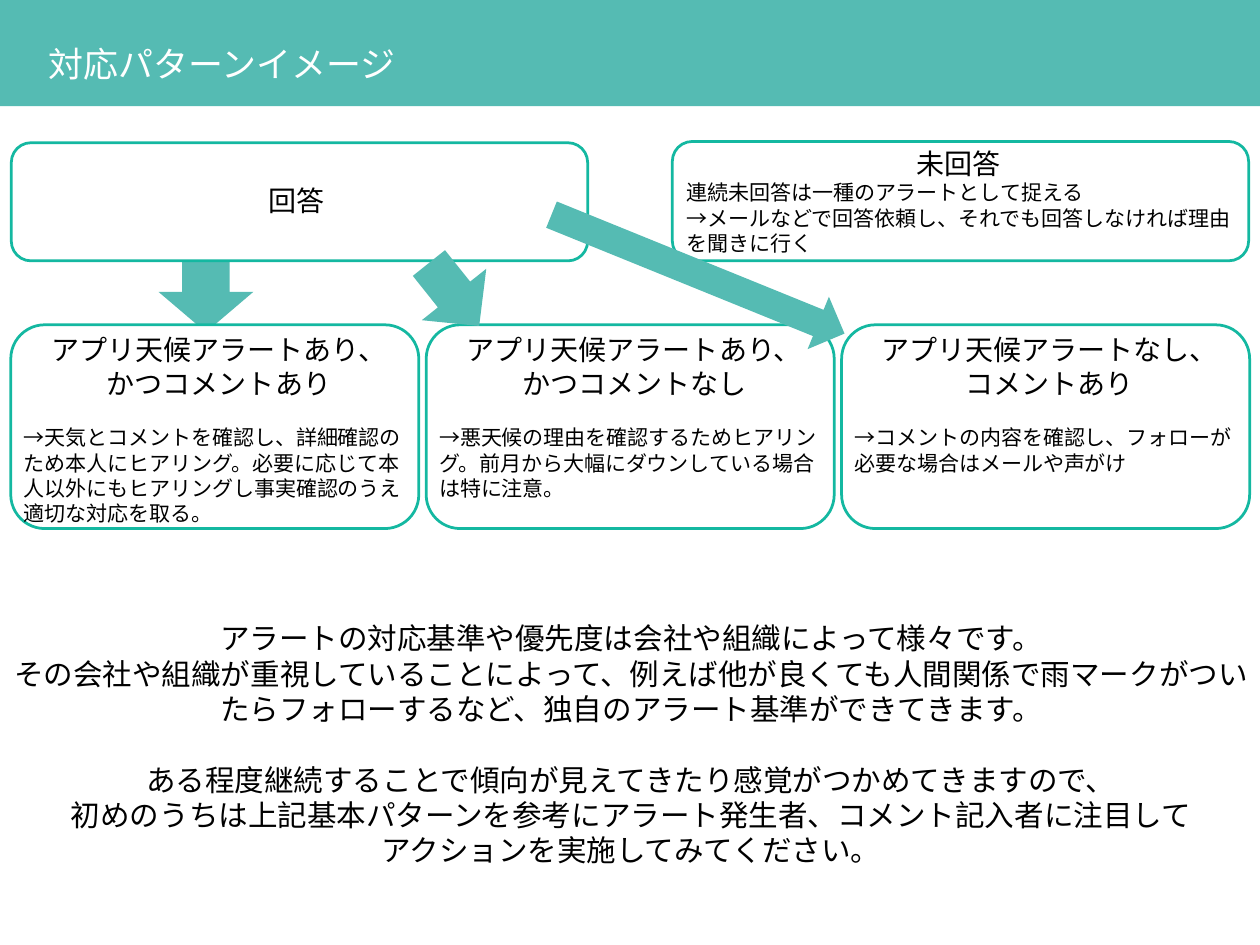
from lxml.etree import SubElement
from pptx import Presentation
from pptx.dml.color import RGBColor
from pptx.enum.shapes import MSO_SHAPE as Shape
from pptx.enum.text import MSO_ANCHOR as Anchor, MSO_AUTO_SIZE as AutoSize, PP_ALIGN as Align
from pptx.oxml.ns import qn
from pptx.util import Pt

FONT = "Noto Sans CJK JP"
TEAL, BORDER, WHITE, BLACK = "55BBB3", "14B8A1", "FFFFFF", "000000"
HEADING, BODY, CLOSING = 22.8, 17.1, 24
LINE_PITCH = 1.19

TITLE = "対応パターンイメージ"
ANSWERED = ["回答"]
UNANSWERED = ["未回答"]
UNANSWERED_NOTES = [
    "連続未回答は一種のアラートとして捉える",
    "→メールなどで回答依頼し、それでも回答しなければ理由を聞きに行く",
]
CASES = [
    (["アプリ天候アラートあり、", "かつコメントあり"],
     "→天気とコメントを確認し、詳細確認のため本人にヒアリング。"
     "必要に応じて本人以外にもヒアリングし事実確認のうえ適切な対応を取る。"),
    (["アプリ天候アラートあり、", "かつコメントなし"],
     "→悪天候の理由を確認するためヒアリング。前月から大幅にダウンしている場合は特に注意。"),
    (["アプリ天候アラートなし、", "コメントあり"],
     "→コメントの内容を確認し、フォローが必要な場合はメールや声がけ"),
]
CLOSING_BLOCKS = [
    ["アラートの対応基準や優先度は会社や組織によって様々です。",
     "その会社や組織が重視していることによって、例えば他が良くても人間関係で"
     "雨マークがついたらフォローするなど、独自のアラート基準ができてきます。"],
    ["ある程度継続することで傾向が見えてきたり感覚がつかめてきますので、",
     "初めのうちは上記基本パターンを参考にアラート発生者、コメント記入者に注目して",
     "アクションを実施してみてください。"],
]
STRAIGHT_ARROW = (128.9, 204.5, 77, 65.5, 0)
SLANTED_ARROWS = [(335.5, 206.6, 67, 65.5, 321.4), (544.3, 94.3, 46, 257, 292.1)]


def color(value):
    return RGBColor.from_string(value)


def style(para, size, align, ink=BLACK):
    para.alignment = align
    para.font.size = Pt(size)
    para.font.name = FONT
    para.font.color.rgb = color(ink)


def set_east_asian_font(box):
    for props in box.element.iter(qn("a:defRPr")):
        SubElement(props, qn("a:ea"), typeface=FONT)


def add_shape(page, kind, left, top, width, height, fill, line=None):
    shape = page.shapes.add_shape(kind, Pt(left), Pt(top), Pt(width), Pt(height))
    shape.shadow.inherit = False
    shape.fill.solid()
    shape.fill.fore_color.rgb = color(fill)
    if line:
        shape.line.color.rgb = color(line)
        shape.line.width = Pt(2.25)
    else:
        shape.line.fill.background()
    return shape


def add_panel(page, left, top, width, height):
    add_shape(page, Shape.ROUNDED_RECTANGLE, left, top, width, height, WHITE, BORDER)


def add_arrow(page, left, top, width, height, angle):
    arrow = add_shape(page, Shape.DOWN_ARROW, left, top, width, height, TEAL)
    arrow.rotation = angle


def add_text(page, left, top, width, height, *blocks):
    box = page.shapes.add_textbox(Pt(left), Pt(top), Pt(width), Pt(height))
    frame = box.text_frame
    frame.word_wrap = True
    first = True
    for lines, size, align, gap in blocks:
        for index, line in enumerate(lines):
            para = frame.paragraphs[0] if first else frame.add_paragraph()
            para.text = line
            style(para, size, align)
            if gap and index == 0:
                para.space_before = Pt(gap)
            first = False
    set_east_asian_font(box)


def add_title(page):
    title = page.shapes.title
    title.left, title.top, title.width, title.height = Pt(27.4), Pt(28.8), Pt(539), Pt(46)
    frame = title.text_frame
    frame.text = TITLE
    frame.auto_size = AutoSize.NONE
    frame.vertical_anchor = Anchor.MIDDLE
    frame.margin_left = Pt(12.2)
    frame.margin_top = frame.margin_right = frame.margin_bottom = Pt(5.8)
    style(frame.paragraphs[0], 28.4, Align.LEFT, WHITE)
    set_east_asian_font(title)
    band = add_shape(page, Shape.RECTANGLE, 0, -0.7, 1024, 87, TEAL)
    title.element.addprevious(band.element)


def add_cases(page):
    left, top, pitch, width, height = 8.8, 264, 337.6, 331.6, 165.6
    for index, (heading, advice) in enumerate(CASES):
        x = left + index * pitch
        add_panel(page, x, top, width, height)
        add_text(page, x + 3.4, top + 2.6, width, height,
                 (heading, HEADING, Align.CENTER, 0),
                 ([advice], BODY, Align.LEFT, BODY * LINE_PITCH))


def main():
    deck = Presentation()
    deck.slide_width, deck.slide_height = Pt(1024), Pt(768)
    page = deck.slides.add_slide(deck.slide_layouts[5])
    add_title(page)
    add_arrow(page, *STRAIGHT_ARROW)

    add_panel(page, 546.4, 115, 468.4, 97)
    add_text(page, 550.8, 115.2, 456.5, 97,
             (UNANSWERED, HEADING, Align.CENTER, 0),
             (UNANSWERED_NOTES, BODY, Align.LEFT, 0))
    add_panel(page, 9.2, 116, 468.4, 96)
    add_text(page, 23, 145.4, 436.3, 34.6, (ANSWERED, HEADING, Align.CENTER, 0))

    add_cases(page)
    for arrow in SLANTED_ARROWS:
        add_arrow(page, *arrow)

    first, second = CLOSING_BLOCKS
    add_text(page, 0.7, 500.4, 1024, 211,
             (first, CLOSING, Align.CENTER, 0),
             (second, CLOSING, Align.CENTER, CLOSING * LINE_PITCH))
    deck.save("out.pptx")


if __name__ == "__main__":
    main()
